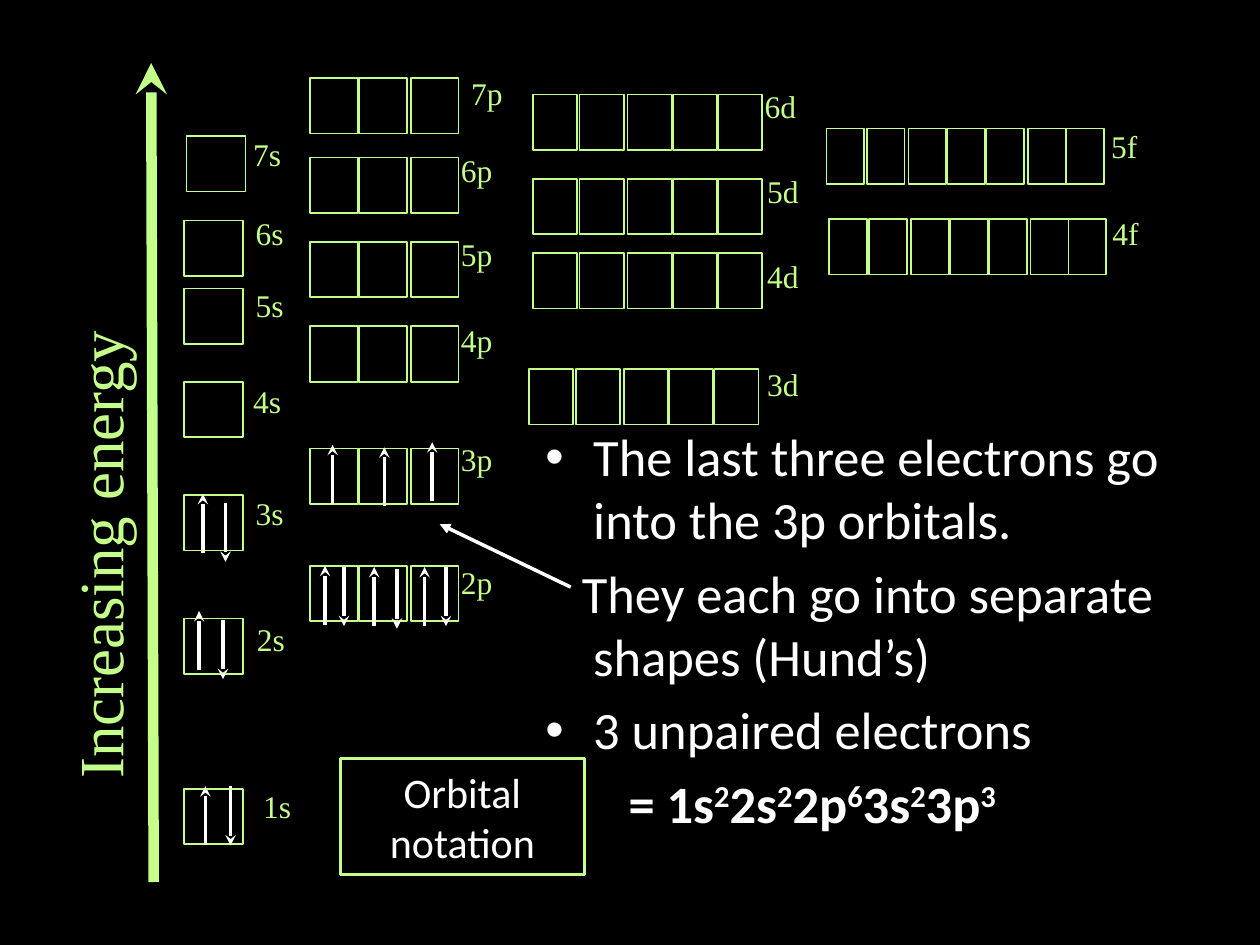
from dataclasses import dataclass

from lxml.etree import SubElement
from pptx import Presentation
from pptx.dml.color import RGBColor
from pptx.enum.shapes import MSO_CONNECTOR, MSO_SHAPE
from pptx.enum.text import MSO_ANCHOR, PP_ALIGN
from pptx.oxml.ns import qn
from pptx.util import Inches, Pt


@dataclass(frozen=True)
class Theme:
    back: str = "000000"
    lime: str = "C4FF89"
    white: str = "FFFFFF"
    serif: str = "Times New Roman"
    sans: str = "Calibri"
    title: int = 36
    body: int = 30
    note: int = 24
    label: int = 18


def color(code):
    return RGBColor.from_string(code)


def write(para, text, size, font, ink, bold=False, align=PP_ALIGN.LEFT,
          bullet=False, margin=0, indent=0, before=0):
    """Fill a paragraph; every second part between ^ marks is raised."""
    props = para._p.get_or_add_pPr()
    if margin:
        props.set("marL", str(Inches(margin)))
        props.set("indent", str(Inches(indent)))
    if bullet:
        SubElement(props, qn("a:buFont")).set("typeface", "Arial")
        SubElement(props, qn("a:buChar")).set("char", "•")
    para.alignment = align
    para.space_before = Pt(before)
    for i, part in enumerate(text.split("^")):
        if not part:
            continue
        run = para.add_run()
        run.text = part
        run.font.size = Pt(size)
        run.font.name = font
        run.font.bold = bold
        run.font.color.rgb = color(ink)
        if i % 2:
            run._r.get_or_add_rPr().set("baseline", "30000")


class Canvas:
    def __init__(self, slide, theme):
        self.slide, self.theme = slide, theme
        fill = slide.background.fill
        fill.solid()
        fill.fore_color.rgb = color(theme.back)

    def box(self, x, y, wide, high, weight=1):
        shape = self.slide.shapes.add_shape(
            MSO_SHAPE.RECTANGLE, *map(Inches, (x, y, wide, high)))
        shape.shadow.inherit = False
        shape.fill.background()
        shape.line.color.rgb = color(self.theme.lime)
        shape.line.width = Pt(weight)
        return shape

    def text(self, x, y, wide, high, turn=0):
        shape = self.slide.shapes.add_textbox(
            *map(Inches, (x, y, wide, high)))
        shape.rotation = turn
        shape.text_frame.word_wrap = True
        return shape.text_frame

    def arrow(self, start, tip, ink, weight=2, head="stealth"):
        line = self.slide.shapes.add_connector(
            MSO_CONNECTOR.STRAIGHT, *map(Inches, (*start, *tip)))
        line.line.color.rgb = color(ink)
        line.line.width = Pt(weight)
        SubElement(line.line._get_or_add_ln(), qn("a:tailEnd")).set("type", head)
        SubElement(line._element.spPr, qn("a:effectLst"))

    def level(self, name, x, y, tag):
        """Draw one row of orbitals and its name."""
        wide, steps = CELLS[name[-1]]
        for step in steps:
            self.box(x + step, y, wide, 0.44)
        style = self.theme
        frame = self.text(*tag, 0.69, 0.63)
        write(frame.paragraphs[0], name, style.label, style.serif, style.lime)

    def spin(self, x, y, up=True):
        ends = [(x, y + 0.47), (x, y)]
        if not up:
            ends.reverse()
        self.arrow(*ends, self.theme.white)


# Cell width and cell offsets of each kind of orbital
CELLS = {
    "s": (0.47, [0]),
    "p": (0.38, [0, 0.39, 0.8]),
    "d": (0.35, [0, 0.37, 0.75, 1.11, 1.47]),
    "f": (0.3, [0, 0.32, 0.65, 0.96, 1.27, 1.6, 1.9]),
}

# Name, left, top and place of the label
LEVELS = [
    ("1s", 1.46, 6.26, (1.99, 6.2)),
    ("2s", 1.46, 4.91, (1.94, 4.87)),
    ("3s", 1.46, 3.93, (1.93, 3.87)),
    ("4s", 1.46, 3.03, (1.91, 2.98)),
    ("5s", 1.46, 2.29, (1.93, 2.22)),
    ("6s", 1.46, 1.75, (1.93, 1.65)),
    ("7s", 1.48, 1.08, (1.91, 1.02)),
    ("2p", 2.46, 4.49, (3.56, 4.42)),
    ("3p", 2.46, 3.56, (3.56, 3.44)),
    ("4p", 2.46, 2.59, (3.56, 2.5)),
    ("5p", 2.46, 1.92, (3.56, 1.82)),
    ("6p", 2.46, 1.25, (3.56, 1.15)),
    ("7p", 2.46, 0.62, (3.64, 0.54)),
    ("3d", 4.2, 2.93, (5.99, 2.85)),
    ("4d", 4.23, 2.01, (5.99, 1.99)),
    ("5d", 4.23, 1.42, (5.99, 1.32)),
    ("6d", 4.23, 0.75, (5.97, 0.64)),
    ("4f", 6.58, 1.74, (8.73, 1.65)),
    ("5f", 6.56, 1.02, (8.72, 0.96)),
]

# Left and top of each electron
UPS = [(1.63, 6.24), (1.58, 4.85), (1.61, 3.92),
       (2.58, 4.49), (2.97, 4.5), (3.37, 4.5),
       (2.64, 3.53), (3.05, 3.55), (3.43, 3.51)]
DOWNS = [(1.83, 6.24), (1.77, 4.92), (1.79, 3.99),
         (2.73, 4.5), (3.15, 4.52), (3.54, 4.5)]

# Text and format of each note
NOTES = [
    ("The last three electrons go into the 3p orbitals.",
     dict(bullet=True, indent=-0.38)),
    ("They each go into separate shapes (Hund’s)",
     dict(indent=-0.09, before=6)),
    ("3 unpaired electrons", dict(bullet=True, indent=-0.38, before=6)),
    ("= 1s^2^2s^2^2p^6^3s^2^3p^3", dict(bold=True, indent=0.28, before=6)),
]


def main():
    deck = Presentation()
    deck.slide_width, deck.slide_height = Inches(10), Inches(7.5)
    theme = Theme()
    page = Canvas(deck.slides.add_slide(deck.slide_layouts[6]), theme)

    # Energy axis
    page.arrow((1.22, 7), (1.2, 0.5), theme.lime, weight=6)
    axis = page.text(-1.54, 3.61, 4.64, 0.7, turn=270)
    write(axis.paragraphs[0], "Increasing energy", theme.title,
          theme.serif, theme.lime)

    # Orbitals
    for level in LEVELS:
        page.level(*level)

    # Notes
    frame = page.text(4.23, 3.32, 5.41, 3.57)
    for i, (text, form) in enumerate(NOTES):
        para = frame.add_paragraph() if i else frame.paragraphs[0]
        write(para, text, theme.body, theme.sans, theme.white,
              margin=0.38, **form)
    page.arrow((4.53, 4.66), (3.49, 4.16), theme.white, head="triangle")

    # Caption
    frame = page.box(2.7, 6.02, 1.94, 0.92, weight=1.75).text_frame
    frame.word_wrap = True
    frame.vertical_anchor = MSO_ANCHOR.MIDDLE
    write(frame.paragraphs[0], "Orbital notation", theme.note, theme.sans,
          theme.white, align=PP_ALIGN.CENTER)

    # Electrons
    for spot in UPS:
        page.spin(*spot)
    for spot in DOWNS:
        page.spin(*spot, up=False)

    deck.save("out.pptx")


if __name__ == "__main__":
    main()
